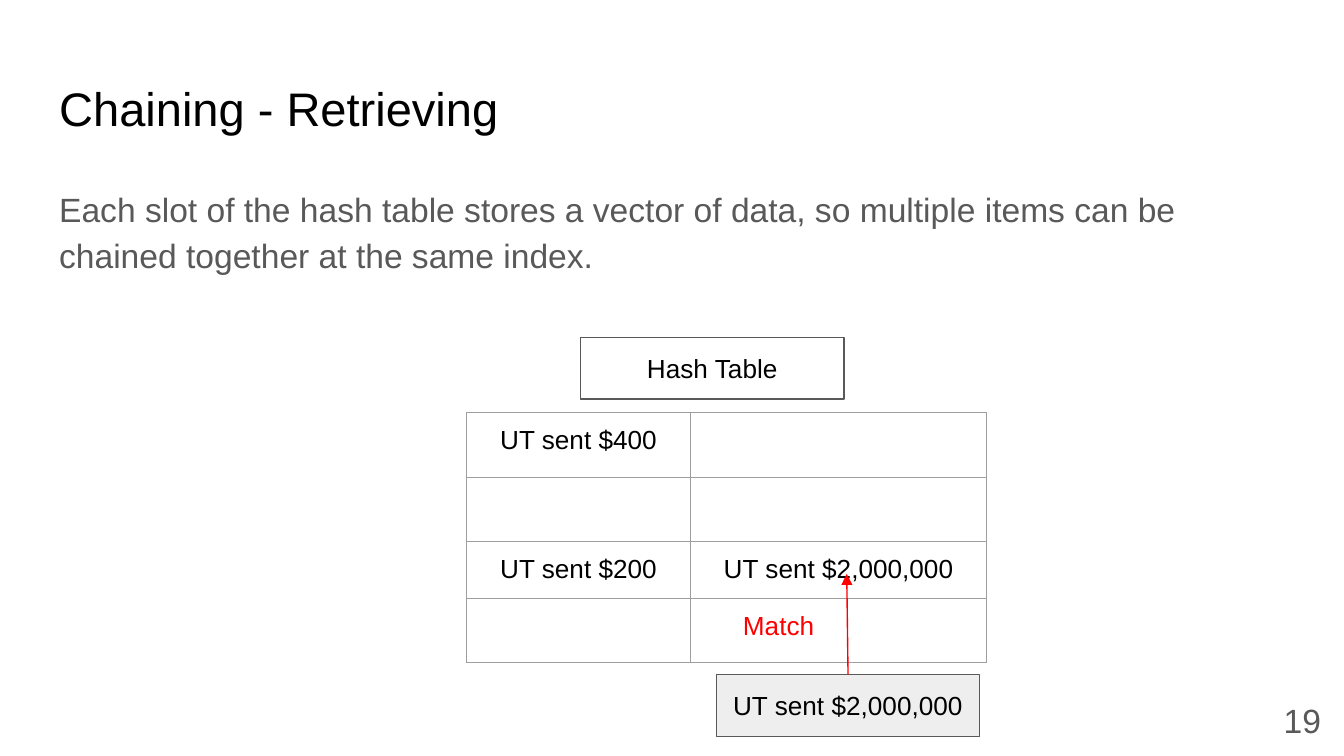
from lxml.etree import SubElement
from pptx import Presentation
from pptx.dml.color import RGBColor
from pptx.enum.shapes import MSO_CONNECTOR as LINE, MSO_SHAPE as SHAPE
from pptx.enum.text import MSO_ANCHOR as ANCHOR, MSO_AUTO_SIZE as FIT, PP_ALIGN as ALIGN
from pptx.oxml import parse_xml
from pptx.oxml.ns import nsdecls, qn
from pptx.util import Inches, Pt

BLACK = RGBColor(0x00, 0x00, 0x00)
GRAY = RGBColor(0x59, 0x59, 0x59)
PALE = RGBColor(0xEE, 0xEE, 0xEE)
RED = RGBColor(0xFF, 0x00, 0x00)
GRID = RGBColor(0x9E, 0x9E, 0x9E)

FONT = "Arial"
PAD = Inches(0.1)
COLS = [1.67, 2.2]
ROWS = [0.48, 0.48, 0.42, 0.48]
SLOTS = [
    ["UT sent $400", ""],
    ["", ""],
    ["UT sent $200", "UT sent $2,000,000"],
    ["", ""],
]


def place(shape, box):
    shape.left, shape.top, shape.width, shape.height = map(Inches, box)


def pad(part):
    """Give a text frame or table cell equal margins."""
    part.margin_left = part.margin_right = PAD
    part.margin_top = part.margin_bottom = PAD


def write(frame, text, size, color, align=ALIGN.LEFT):
    para = frame.paragraphs[0]
    para.alignment = align
    run = para.add_run()
    run.text = text
    run.font.name = FONT
    run.font.size = Pt(size)
    run.font.color.rgb = color
    return para


def set_up(frame, anchor, fit=FIT.NONE):
    pad(frame)
    frame.word_wrap = True
    frame.auto_size = fit
    frame.vertical_anchor = anchor


def fill_holder(holder, box, text, size, color):
    place(holder, box)
    set_up(holder.text_frame, ANCHOR.TOP)
    return write(holder.text_frame, text, size, color)


def add_body(holder, box, text):
    para = fill_holder(holder, box, text, 18, GRAY)
    props = para._p.get_or_add_pPr()
    props.set("marL", "0")
    props.set("indent", "0")
    SubElement(props, qn("a:buNone"))
    para.line_spacing = 1.15
    para.space_before = Pt(0)
    para.space_after = Pt(12)


def add_box(slide, box, text, fill=None):
    shape = slide.shapes.add_shape(SHAPE.RECTANGLE, *map(Inches, box))
    shape.shadow.inherit = False
    if fill is None:
        shape.fill.background()
    else:
        shape.fill.solid()
        shape.fill.fore_color.rgb = fill
    shape.line.color.rgb = GRAY
    shape.line.width = Pt(0.75)
    set_up(shape.text_frame, ANCHOR.MIDDLE)
    write(shape.text_frame, text, 14, BLACK, ALIGN.CENTER)
    return shape


def add_label(slide, box, text, size, color, anchor, align, fit=FIT.NONE):
    label = slide.shapes.add_textbox(*map(Inches, box))
    set_up(label.text_frame, anchor, fit)
    return write(label.text_frame, text, size, color, align)


def edge(cell):
    """Draw thin lines on all four sides of a cell."""
    props = cell._tc.get_or_add_tcPr()
    for spot, side in enumerate("LRTB"):
        props.insert(spot, parse_xml(
            f'<a:ln{side} {nsdecls("a")} w="{Pt(0.75)}"><a:solidFill>'
            f'<a:srgbClr val="{GRID}"/></a:solidFill></a:ln{side}>'))


def set_blank(cell):
    """Give an empty cell the slide's font, which sets its least height."""
    mark = SubElement(cell.text_frame.paragraphs[0]._p, qn("a:endParaRPr"), sz="1800")
    SubElement(mark, qn("a:latin"), typeface=FONT)


def add_grid(slide, left, top):
    box = map(Inches, (left, top, sum(COLS), sum(ROWS)))
    table = slide.shapes.add_table(len(ROWS), len(COLS), *box).table
    table.first_row = table.horz_banding = False
    for col, width in zip(table.columns, COLS):
        col.width = Inches(width)
    for row, height, texts in zip(table.rows, ROWS, SLOTS):
        row.height = Inches(height)
        for cell, text in zip(row.cells, texts):
            pad(cell)
            cell.fill.background()
            edge(cell)
            if text:
                write(cell.text_frame, text, 14, BLACK, ALIGN.CENTER)
            else:
                set_blank(cell)


def add_arrow(slide, start, end):
    """Point from the top of the start box to a spot."""
    x, y = map(Inches, end)
    arrow = slide.shapes.add_connector(LINE.STRAIGHT, x, y, x, y)
    arrow.begin_connect(start, 0)
    arrow.line.color.rgb = RED
    arrow.line.width = Pt(0.75)
    SubElement(arrow.line._get_or_add_ln(), qn("a:tailEnd"), type="triangle")
    SubElement(arrow._element.spPr, qn("a:effectLst"))


def add_lookup(slide, left, top):
    """Place the hash table, the key looked up and the match."""
    add_grid(slide, left, top + 0.56)
    add_box(slide, (left + 0.85, top, 1.96, 0.46), "Hash Table")
    key = add_box(slide, (left + 1.86, top + 2.51, 1.96, 0.46),
                  "UT sent $2,000,000", PALE)
    add_arrow(slide, key, (left + 2.83, top + 1.76))
    para = add_label(slide, (left + 1.46, top + 1.91, 1.96, 0.46), "Match",
                     14, RED, ANCHOR.MIDDLE, ALIGN.LEFT)
    para._p.get_or_add_pPr().set("indent", str(Inches(0.5)))


def main():
    deck = Presentation()
    deck.slide_width = Inches(10)
    deck.slide_height = deck.slide_width * 9 // 16
    slide = deck.slides.add_slide(deck.slide_layouts[1])
    title, body = slide.placeholders
    fill_holder(title, (0.34, 0.49, 9.32, 0.63), "Chaining - Retrieving", 25.2, BLACK)
    add_body(body, (0.34, 1.26, 9.32, 0.96),
             "Each slot of the hash table stores a vector of data, so multiple "
             "items can be chained together at the same index.")
    add_lookup(slide, 3.47, 2.51)
    add_label(slide, (9.42, 5.11, 0.54, 0.5), "19", 18, GRAY,
              ANCHOR.TOP, ALIGN.CENTER, FIT.SHAPE_TO_FIT_TEXT)
    deck.save("out.pptx")


if __name__ == "__main__":
    main()
